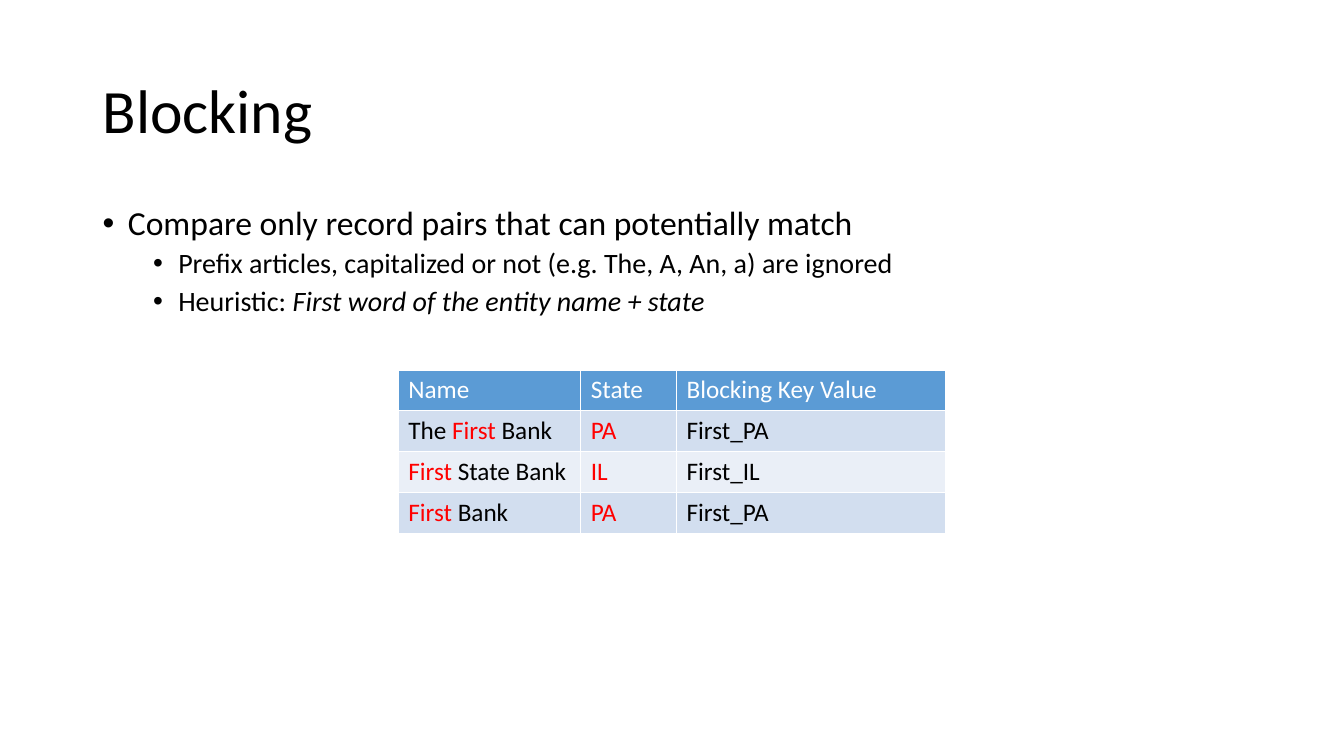
"""Build the Blocking slide."""
from lxml.etree import SubElement
from pptx import Presentation
from pptx.dml.color import RGBColor
from pptx.enum.text import MSO_ANCHOR
from pptx.oxml.ns import qn
from pptx.util import Inches, Pt

FONT = "Calibri"
HUES = {"ink": "000000", "key": "FF0000", "white": "FFFFFF",
        "head": "5B9BD5", "odd": "D2DEEF", "even": "EAEFF7"}
TITLE = "Blocking"
POINTS = [
    (0, [("Compare only record pairs that can potentially match", False)]),
    (1, [("Prefix articles, capitalized or not (e.g. The, A, An, a) are ignored", False)]),
    (1, [("Heuristic: ", False), ("First word of the entity name + state", True)]),
]
LEVELS = [{"size": 24, "left": 0.25, "gap": 10},
          {"size": 20, "left": 0.75, "gap": 5}]
HEAD = ["Name", "State", "Blocking Key Value"]
ROWS = [
    ([("The ", "ink"), ("First", "key"), (" Bank", "ink")], "PA", "First_PA"),
    ([("First", "key"), (" State Bank", "ink")], "IL", "First_IL"),
    ([("First", "key"), (" Bank", "ink")], "PA", "First_PA"),
]
WIDTHS = [1.81, 0.95, 2.67]
ROW_H = 0.405


def add_run(para, text, size, hue="ink", italic=False):
    run = para.add_run()
    run.text = text
    font = run.font
    font.name, font.size = FONT, Pt(size)
    font.bold, font.italic = False, italic
    font.color.rgb = RGBColor.from_string(HUES[hue])


def add_text(slide, top, height):
    box = slide.shapes.add_textbox(Inches(0.92), Inches(top), Inches(11.5), Inches(height))
    box.text_frame.word_wrap = True
    return box.text_frame


def add_bullet(para, left):
    props = para._p.get_or_add_pPr()
    props.set("marL", str(Inches(left)))
    props.set("indent", str(Inches(-0.25)))
    SubElement(props, qn("a:buFont"), typeface="Arial")
    SubElement(props, qn("a:buChar"), char="•")


def add_points(frame):
    for num, (level, runs) in enumerate(POINTS):
        para = frame.add_paragraph() if num else frame.paragraphs[0]
        look = LEVELS[level]
        para.level = level
        para.line_spacing = 0.9
        para.space_before = Pt(look["gap"])
        add_bullet(para, look["left"])
        for text, italic in runs:
            add_run(para, text, look["size"], italic=italic)


def add_grid(slide):
    lines = [[[(text, "white")] for text in HEAD]]
    lines += [[name, [(state, "key")], [(value, "ink")]] for name, state, value in ROWS]
    table = slide.shapes.add_table(
        len(lines), len(WIDTHS), Inches(3.95), Inches(3.67),
        Inches(sum(WIDTHS)), Inches(ROW_H * len(lines))).table
    for col, width in zip(table.columns, WIDTHS):
        col.width = Inches(width)
    for num, line in enumerate(lines):
        fill = "head" if num == 0 else "odd" if num % 2 else "even"
        for cell, runs in zip(table.rows[num].cells, line):
            cell.fill.solid()
            cell.fill.fore_color.rgb = RGBColor.from_string(HUES[fill])
            for text, hue in runs:
                add_run(cell.text_frame.paragraphs[0], text, 18, hue)


def main():
    deck = Presentation()
    deck.slide_width, deck.slide_height = Inches(13.33), Inches(7.5)
    slide = deck.slides.add_slide(deck.slide_layouts[6])
    title = add_text(slide, 0.4, 1.45)
    title.vertical_anchor = MSO_ANCHOR.MIDDLE
    title.paragraphs[0].line_spacing = 0.9
    add_run(title.paragraphs[0], TITLE, 44)
    add_points(add_text(slide, 2, 4.76))
    add_grid(slide)
    deck.save("out.pptx")


if __name__ == "__main__":
    main()
